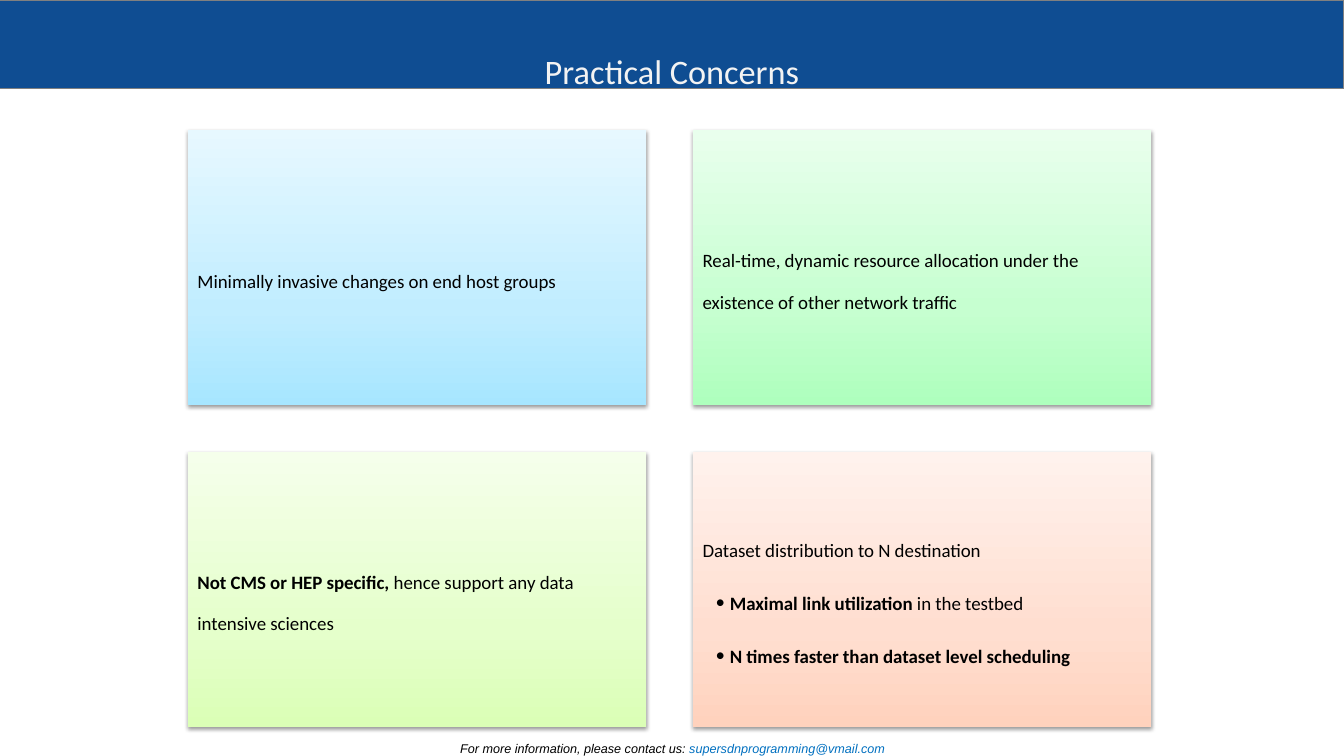
from pptx import Presentation
from pptx.dml.color import RGBColor
from pptx.enum.shapes import MSO_SHAPE
from pptx.enum.text import MSO_ANCHOR, MSO_AUTO_SIZE, PP_ALIGN
from pptx.oxml import parse_xml
from pptx.oxml.ns import nsdecls
from pptx.util import Inches, Pt

COLORS = {"banner": "0F4D92", "edge": "808080", "title": "F3F3F3",
          "text": "000000", "link": "0070C0"}
GRADIENTS = {"blue": ("A7E6FF", "C1EDFF", "E7F8FF"),
             "mint": ("AEFFBD", "C6FFD0", "E9FFED"),
             "lime": ("DBFFB6", "E5FFCB", "F5FFEB"),
             "peach": ("FFD2BD", "FFDED0", "FFF2ED")}

# Each card: gradient, then paragraphs as (bulleted, [(text, bold), ...])
CARDS = [
    ("blue", [(False, [("Minimally invasive changes on end host groups", False)])]),
    ("mint", [(False, [("Real-time, dynamic resource allocation under the "
                        "existence of other network traffic", False)])]),
    ("lime", [(False, [("Not CMS or HEP specific, ", True),
                       ("hence support any data intensive sciences", False)])]),
    ("peach", [(False, [("Dataset distribution to N destination", False)]),
               (True, [("Maximal link utilization ", True),
                       ("in the testbed", False)]),
               (True, [("N times faster than dataset level scheduling", True)])]),
]
CARD_W, CARD_H = 4.55, 2.73
LEFT, TOP = 1.86, 1.29
PITCH_X, PITCH_Y = 5.01, 3.19


def style(r, size, color, font="Calibri", bold=False, italic=False):
    r.font.name, r.font.size = font, Pt(size)
    r.font.bold, r.font.italic = bold, italic
    r.font.color.rgb = RGBColor.from_string(COLORS[color])


def add_run(p, text, size, color, **kwargs):
    r = p.add_run()
    r.text = text
    style(r, size, color, **kwargs)


def set_frame(tf, anchor, margins):
    tf.word_wrap = True
    tf.auto_size = MSO_AUTO_SIZE.NONE
    tf.vertical_anchor = anchor
    tf.margin_left, tf.margin_top, tf.margin_right, tf.margin_bottom = map(Inches, margins)


def add_banner(s):
    sp = s.shapes.add_shape(MSO_SHAPE.RECTANGLE, 0, 0, Inches(13.33), Inches(0.88))
    sp.shadow.inherit = False
    sp.fill.solid()
    sp.fill.fore_color.rgb = RGBColor.from_string(COLORS["banner"])
    sp.line.color.rgb = RGBColor.from_string(COLORS["edge"])
    sp.line.width = Pt(0.75)
    s.shapes._spTree.insert(2, sp._element)  # behind the title


def set_title(s, text):
    sp = s.shapes.title
    sp.left, sp.top = Inches(0), Inches(0.01)
    sp.width, sp.height = Inches(13.33), Inches(0.84)
    tf = sp.text_frame
    tf.text = text
    set_frame(tf, MSO_ANCHOR.TOP, (0.1, 0.49, 0.1, 0))
    p = tf.paragraphs[0]
    p.alignment = PP_ALIGN.CENTER
    style(p.runs[0], 24.5, "title")


def set_gradient(sp, colors):
    sp.fill.gradient()
    sp.fill.gradient_angle = 90
    stops = sp._element.spPr.find(".//{*}gsLst")
    for stop in list(stops):
        stops.remove(stop)
    for pos, color in zip((0, 35, 100), colors):
        stops.append(parse_xml(f'<a:gs {nsdecls("a")} pos="{pos * 1000}">'
                               f'<a:srgbClr val="{color}"/></a:gs>'))


def set_shadow(sp):
    sp.shadow.inherit = False
    effects = sp._element.spPr.find("{*}effectLst")
    effects.append(parse_xml(
        f'<a:outerShdw {nsdecls("a")} blurRad="{Pt(3.1)}" dist="{Pt(1.6)}" '
        'dir="5400000" rotWithShape="0"><a:srgbClr val="000000">'
        '<a:alpha val="38000"/></a:srgbClr></a:outerShdw>'))


def set_bullet(p):
    pPr = p._p.get_or_add_pPr()
    pPr.set("marL", str(Inches(0.27)))
    pPr.set("indent", str(-Inches(0.14)))
    pPr.append(parse_xml(f'<a:buFont {nsdecls("a")} typeface="Calibri"/>'))
    pPr.append(parse_xml(f'<a:buChar {nsdecls("a")} char="•"/>'))


def add_card(s, left, top, gradient, paragraphs):
    sp = s.shapes.add_shape(MSO_SHAPE.RECTANGLE, Inches(left), Inches(top),
                            Inches(CARD_W), Inches(CARD_H))
    set_gradient(sp, GRADIENTS[gradient])
    sp.line.fill.background()
    set_shadow(sp)
    tf = sp.text_frame
    set_frame(tf, MSO_ANCHOR.MIDDLE, (0.1, 0.18, 0.1, 0.1))
    for i, (bulleted, runs) in enumerate(paragraphs):
        p = tf.paragraphs[0] if i == 0 else tf.add_paragraph()
        p.alignment = PP_ALIGN.LEFT
        p.line_spacing, p.space_after = Pt(29.6), Pt(8.2)
        if bulleted:
            set_bullet(p)
        for text, bold in runs:
            add_run(p, text, 13.5, "text", bold=bold)


def add_contact(s):
    sp = s.shapes.add_textbox(Inches(1.1), Inches(7.16), Inches(11.14), Inches(0.34))
    tf = sp.text_frame
    set_frame(tf, MSO_ANCHOR.BOTTOM, (0.1, 0, 0.1, 0))
    p = tf.paragraphs[0]
    p.alignment = PP_ALIGN.CENTER
    for text, color in (("For more information, please contact us: ", "text"),
                        ("supersdnprogramming@vmail.com", "link")):
        add_run(p, text, 9, color, font="Arial", italic=True)


def main():
    prs = Presentation()
    prs.slide_width, prs.slide_height = Inches(13.33), Inches(7.5)
    s = prs.slides.add_slide(prs.slide_layouts[5])

    # Header
    add_banner(s)
    set_title(s, "Practical Concerns")

    # Two by two grid of cards
    for i, (gradient, paragraphs) in enumerate(CARDS):
        row, col = divmod(i, 2)
        add_card(s, LEFT + col * PITCH_X, TOP + row * PITCH_Y, gradient, paragraphs)

    # Footer
    add_contact(s)
    prs.save("out.pptx")


if __name__ == "__main__":
    main()
